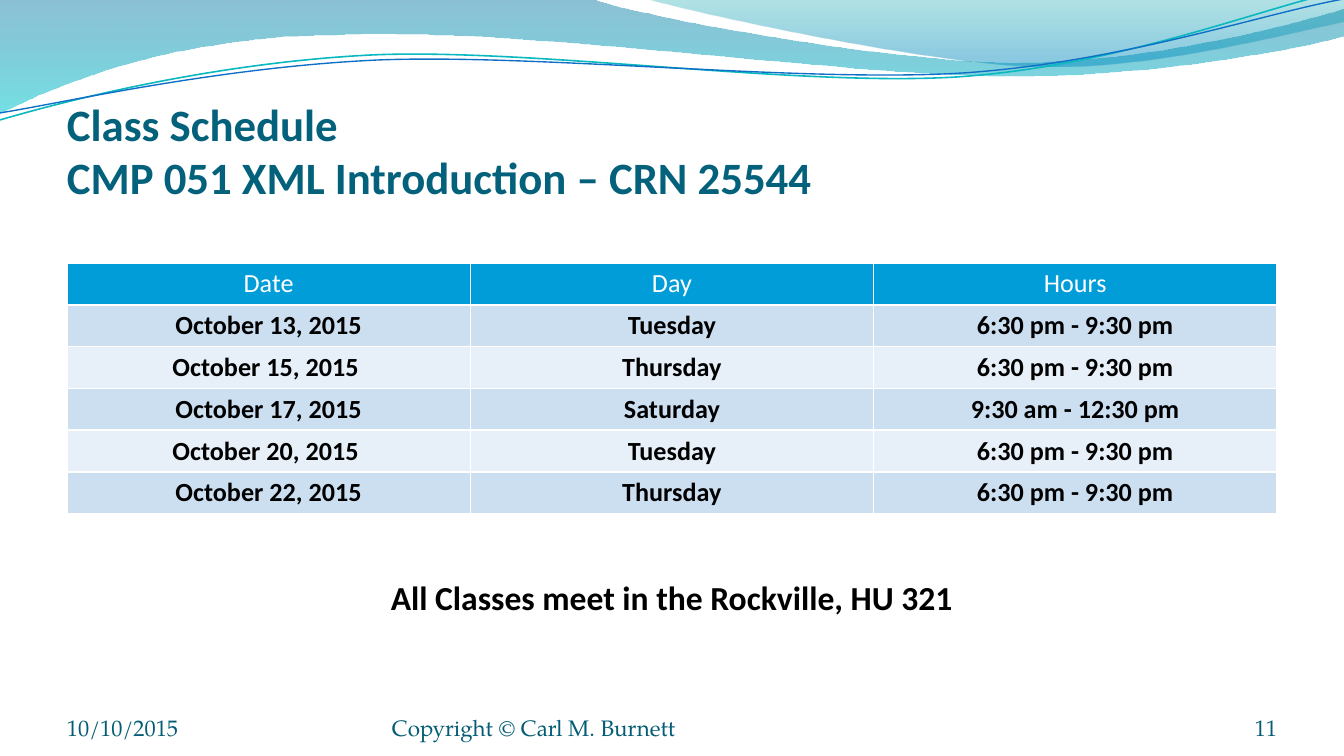
import pptx
import pptx.dml.color
import pptx.enum.text
import pptx.oxml.ns
import pptx.util
from dataclasses import dataclass

Align = pptx.enum.text.PP_ALIGN
Anchor = pptx.enum.text.MSO_ANCHOR
Pt = pptx.util.Pt
qn = pptx.oxml.ns.qn

TITLE = "Class Schedule\vCMP 051 XML Introduction – CRN 25544"
SCHEDULE = [
    ("Date", "Day", "Hours"),
    ("October 13, 2015", "Tuesday", "6:30 pm - 9:30 pm"),
    ("October 15, 2015 ", "Thursday", "6:30 pm - 9:30 pm"),
    ("October 17, 2015", "Saturday", "9:30 am - 12:30 pm"),
    ("October 20, 2015 ", "Tuesday", "6:30 pm - 9:30 pm"),
    ("October 22, 2015", "Thursday", "6:30 pm - 9:30 pm"),
]
NOTE = "All Classes meet in the Rockville, HU 321"
FOOTERS = [  # text, left, width, alignment
    ("10/10/2015", 67, 313, Align.LEFT),
    ("Copyright © Carl M. Burnett", 392, 493, Align.LEFT),
    ("11", 1165, 112, Align.RIGHT),
]


@dataclass(frozen=True)
class Theme:
    heading: str = "04617B"
    footer: str = "045D75"
    text: str = "000000"
    white: str = "FFFFFF"
    header_fill: str = "009DD9"
    bands: tuple = ("CCDFF1", "E7EFF8")
    body_font: str = "Calibri"
    footer_font: str = "TeX Gyre Pagella"
    title_size: int = 24
    note_size: int = 18
    table_size: int = 14
    footer_size: int = 12


THEME = Theme()

# A path is a list of steps: two numbers make a line, six make a cubic curve.
# Gradient stops run from top to bottom: position, colour, opacity in percent.
WAVES = [
    ([(0, 0), (591, -1), (640, 17, 892, 63, 1019, 63),
      (1146, 63, 1288, 26, 1344, 9), (1345, 36),
      (1321, 44, 1169, 77, 1003, 77), (836, 75, 513, 28, 345, 35),
      (173, 36, 62, 83, -1, 114)],
     [(0, "0074A1", 45), (1, "00C6CF", 55)]),
    ([(644, -1), (684, 11, 917, 62, 1034, 66),
      (1150, 70, 1292, 32, 1344, 22), (1344, 0)],
     [(0, "00A1A9", 30), (0.8, "008BBF", 45)]),
]
SWOOSHES = [  # path, colour, line width
    ([(0, 120), (65, 101, 212, 63, 372, 55), (532, 48, 796, 87, 957, 77),
      (1120, 66, 1262, 8, 1341, -9)], "0AB8BF", 0.85),
    ([(0, 113), (63, 103, 220, 67, 380, 60), (542, 54, 802, 83, 964, 73),
      (1124, 62, 1265, 13, 1344, -1)], "0F6FC6", 0.75),
]


def px(length):
    return round(length * 914400 / 134.4)


def rgb(colour):
    return pptx.dml.color.RGBColor.from_string(colour)


def add_outline(page, steps, closed):
    """Draw lines through all points, then merge each curve's three lines into one cubic."""
    points = [(px(x), px(y)) for step in steps for x, y in zip(step[::2], step[1::2])]
    builder = page.shapes.build_freeform(*points[0], scale=1.0)
    builder.add_line_segments(points[1:], close=closed)
    shape = builder.convert_to_shape()
    shape.shadow.inherit = False
    lines = iter(list(shape._element.iter(qn("a:lnTo"))))
    for step in steps[1:]:
        first = next(lines)
        if len(step) == 6:
            curve = first.makeelement(qn("a:cubicBezTo"), {})
            first.addprevious(curve)
            for line in (first, next(lines), next(lines)):
                curve.append(line[0])
                line.getparent().remove(line)
    return shape


def add_wave(page, steps, stops):
    wave = add_outline(page, steps, True)
    wave.line.fill.background()
    wave.fill.gradient()
    wave.fill.gradient_angle = 270
    for stop, (position, colour, _) in zip(wave.fill.gradient_stops, stops):
        stop.position = position
        stop.color.rgb = rgb(colour)
    colours = wave._element.spPr.iter(qn("a:srgbClr"))
    for element, (_, _, opacity) in zip(colours, stops):
        element.append(element.makeelement(qn("a:alpha"), {"val": str(opacity * 1000)}))


def add_swoosh(page, steps, colour, width):
    swoosh = add_outline(page, steps, False)
    swoosh.fill.background()
    swoosh.line.color.rgb = rgb(colour)
    swoosh.line.width = Pt(width)


def write(frame, text, font, size, colour, bold=False, align=Align.LEFT):
    frame.text = text
    para = frame.paragraphs[0]
    para.alignment = align
    para.font.name = font
    para.font.size = Pt(size)
    para.font.bold = bold
    para.font.color.rgb = rgb(colour)


def set_insets(owner, left=0, top=0, right=0, bottom=0):
    owner.margin_left, owner.margin_right = px(left), px(right)
    owner.margin_top, owner.margin_bottom = px(top), px(bottom)


def place_title(page):
    title = page.shapes.title
    title.left, title.top, title.width, title.height = map(px, (67, 78, 1210, 126))
    frame = title.text_frame
    write(frame, TITLE, THEME.body_font, THEME.title_size, THEME.heading, bold=True)
    frame.auto_size = pptx.enum.text.MSO_AUTO_SIZE.NONE
    frame.vertical_anchor = Anchor.BOTTOM
    set_insets(frame, top=7)


def add_schedule(page):
    rows, columns, height = len(SCHEDULE), len(SCHEDULE[0]), 249
    table = page.shapes.add_table(rows, columns, px(67), px(263), px(1210),
                                  px(height)).table
    for r, record in enumerate(SCHEDULE):
        header = r == 0
        fill = THEME.header_fill if header else THEME.bands[(r - 1) % 2]
        for c, text in enumerate(record):
            cell = table.cell(r, c)
            write(cell.text_frame, text, THEME.body_font, THEME.table_size,
                  THEME.white if header else THEME.text, not header, Align.CENTER)
            set_insets(cell, 12, 5, 12, 5)
            cell.fill.solid()
            cell.fill.fore_color.rgb = rgb(fill)


def add_note(page):
    box = page.shapes.add_textbox(px(375), px(570), px(594), px(54))
    frame = box.text_frame
    write(frame, NOTE, THEME.body_font, THEME.note_size, THEME.text, True, Align.CENTER)
    frame.word_wrap = False
    frame.auto_size = pptx.enum.text.MSO_AUTO_SIZE.SHAPE_TO_FIT_TEXT


def add_footers(page):
    for text, left, width, align in FOOTERS:
        box = page.shapes.add_textbox(px(left), px(700), px(width), px(41))
        frame = box.text_frame
        write(frame, text, THEME.footer_font, THEME.footer_size, THEME.footer, align=align)
        frame.word_wrap = True
        frame.vertical_anchor = Anchor.BOTTOM
        set_insets(frame)


def main():
    deck = pptx.Presentation()
    deck.slide_width, deck.slide_height = px(1344), px(756)
    page = deck.slides.add_slide(deck.slide_layouts.get_by_name("Title Only"))
    for wave in WAVES:
        add_wave(page, *wave)
    for swoosh in SWOOSHES:
        add_swoosh(page, *swoosh)
    place_title(page)
    add_schedule(page)
    add_footers(page)
    add_note(page)
    deck.save("out.pptx")


if __name__ == "__main__":
    main()
